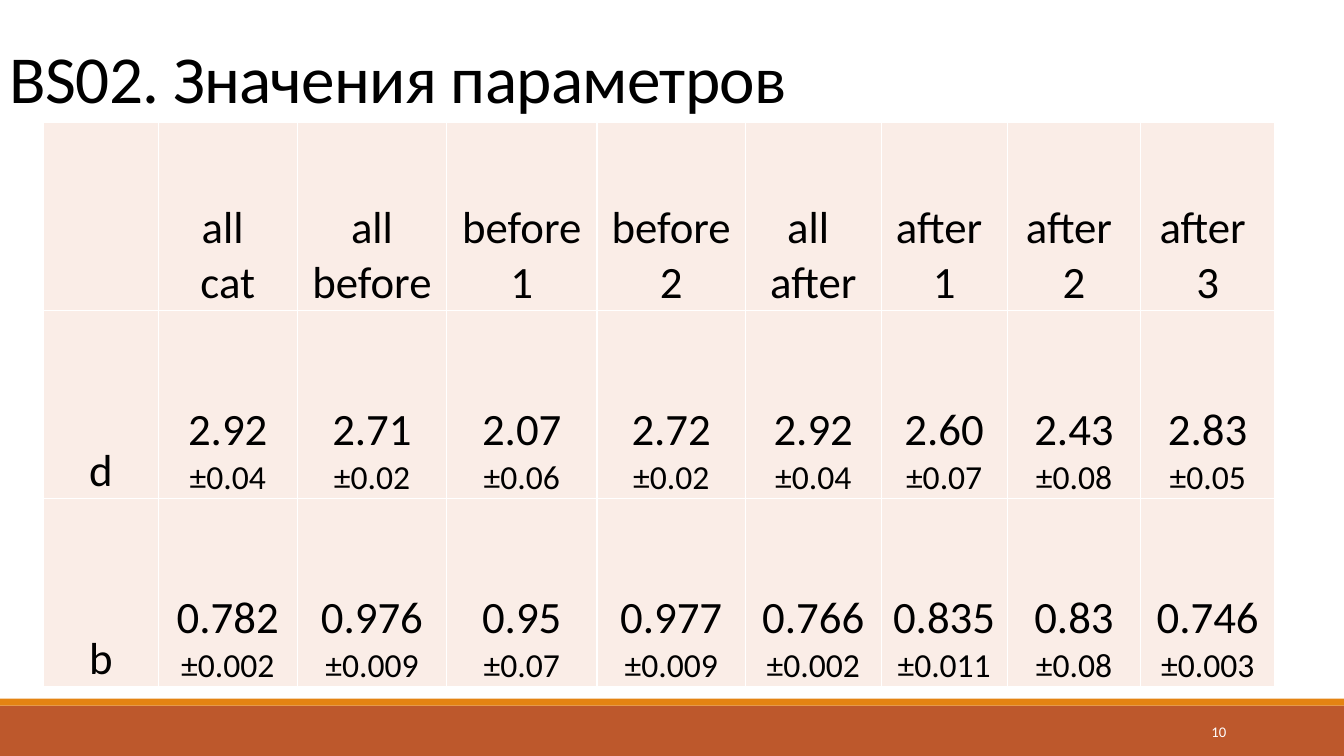
from lxml.etree import SubElement
from pptx import Presentation
from pptx.dml.color import RGBColor
from pptx.enum.shapes import MSO_SHAPE
from pptx.enum.text import MSO_ANCHOR as Anchor, PP_ALIGN as Align
from pptx.oxml.ns import qn
from pptx.util import Pt

TITLE = "BS02. Значения параметров"
PAGE = "10"
GROUPS = [("all ", "cat"), ("all", "before"), ("before", "1"), ("before", "2"),
          ("all ", "after"), ("after ", "1"), ("after ", "2"), ("after ", "3")]
PARAMETERS = {
    "d": [("2.92", "±0.04"), ("2.71", "±0.02"), ("2.07", "±0.06"), ("2.72", "±0.02"),
          ("2.92", "±0.04"), ("2.60", "±0.07"), ("2.43", "±0.08"), ("2.83", "±0.05")],
    "b": [("0.782", "±0.002"), ("0.976", "±0.009"), ("0.95", "±0.07"), ("0.977", "±0.009"),
          ("0.766", "±0.002"), ("0.835", "±0.011"), ("0.83", "±0.08"), ("0.746", "±0.003")],
}
COLORS = {"text": "000000", "cell": "FAEDE7", "border": "FFFFFF", "page": "FFFFFF",
          "footer": "BD582C", "stripe": "E48312"}
FONT = "Calibri"
WIDTH, HEIGHT = 960, 540
FOOTER_TOP, STRIPE_HEIGHT = 504, 5
TABLE_LEFT, TABLE_TOP, ROW_HEIGHT = 31, 87.5, 134.25
COLUMN_WIDTHS = [82, 99.5, 106.5, 107.5, 106, 97, 90, 95.5, 95.5]
VALUE_SIZE, ERROR_SIZE = 32, 24


def color(name):
    return RGBColor.from_string(COLORS[name])


def style(paragraph, text, size, tone="text", align=Align.LEFT):
    paragraph.text = text
    paragraph.alignment = align
    paragraph.font.name = FONT
    paragraph.font.size = Pt(size)
    paragraph.font.color.rgb = color(tone)


def add_band(slide, top, height, tone):
    band = slide.shapes.add_shape(MSO_SHAPE.RECTANGLE, 0, Pt(top), Pt(WIDTH), Pt(height))
    band.shadow.inherit = False
    band.fill.solid()
    band.fill.fore_color.rgb = color(tone)
    band.line.fill.background()


def add_label(slide, box, anchor, *text_style):
    frame = slide.shapes.add_textbox(*map(Pt, box)).text_frame
    frame.word_wrap = True
    frame.vertical_anchor = anchor
    style(frame.paragraphs[0], *text_style)
    return frame.paragraphs[0]


def fill_cell(cell, lines, sizes):
    cell.margin_left = cell.margin_right = cell.margin_top = Pt(0.75)
    cell.margin_bottom = 0
    cell.vertical_anchor = Anchor.BOTTOM
    properties = cell._tc.get_or_add_tcPr()
    for side in ("lnL", "lnR", "lnT", "lnB"):
        border = SubElement(properties, qn(f"a:{side}"), w=str(Pt(1)))
        solid = SubElement(border, qn("a:solidFill"))
        SubElement(solid, qn("a:srgbClr"), val=COLORS["border"])
    cell.fill.solid()
    cell.fill.fore_color.rgb = color("cell")
    frame = cell.text_frame
    for i, (line, size) in enumerate(zip(lines, sizes)):
        paragraph = frame.add_paragraph() if i else frame.paragraphs[0]
        style(paragraph, line, size, align=Align.CENTER)


def add_values(slide):
    rows = [[(), *GROUPS]] + [[(name,), *values] for name, values in PARAMETERS.items()]
    table = slide.shapes.add_table(
        len(rows), len(COLUMN_WIDTHS), Pt(TABLE_LEFT), Pt(TABLE_TOP),
        Pt(sum(COLUMN_WIDTHS)), Pt(ROW_HEIGHT * len(rows))).table
    table.first_row = table.horz_banding = False
    for column, width in zip(table.columns, COLUMN_WIDTHS):
        column.width = Pt(width)
    for r, row in enumerate(rows):
        table.rows[r].height = Pt(ROW_HEIGHT)
        sizes = (VALUE_SIZE, ERROR_SIZE if r else VALUE_SIZE)
        for c, lines in enumerate(row):
            fill_cell(table.cell(r, c), lines, sizes)


def main():
    deck = Presentation()
    deck.slide_width, deck.slide_height = Pt(WIDTH), Pt(HEIGHT)
    slide = deck.slides.add_slide(deck.slide_layouts[6])
    add_band(slide, FOOTER_TOP, HEIGHT - FOOTER_TOP, "footer")
    add_band(slide, FOOTER_TOP - STRIPE_HEIGHT, STRIPE_HEIGHT, "stripe")
    title = add_label(slide, (0, 0, 828, 87), Anchor.BOTTOM, TITLE, 48)
    title.line_spacing = 0.85
    title.runs[0]._r.get_or_add_rPr().set("spc", "-50")
    add_values(slide)
    add_label(slide, (780, 508.5, 103, 28.5), Anchor.MIDDLE, PAGE, 10.5, "page", Align.RIGHT)
    deck.save("out.pptx")


if __name__ == "__main__":
    main()
